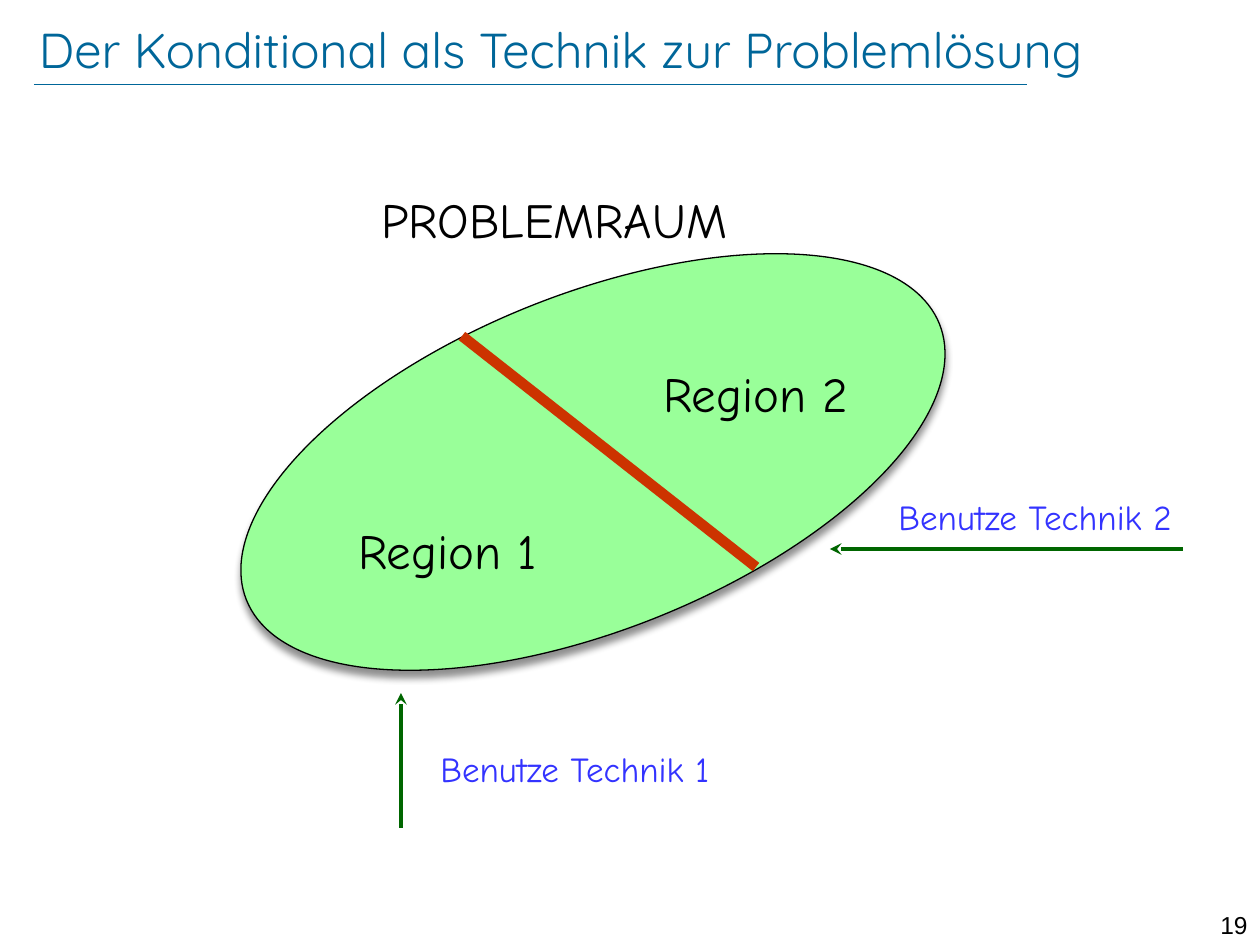
from lxml.etree import SubElement
from pptx import Presentation
from pptx.dml.color import RGBColor
from pptx.enum.shapes import MSO_CONNECTOR as Connector, MSO_SHAPE as Shape
from pptx.enum.text import MSO_ANCHOR as Anchor, PP_ALIGN as Align
from pptx.oxml.ns import qn
from pptx.util import Inches, Pt

PX = Inches(1) / 126
BLACK = RGBColor(0x00, 0x00, 0x00)
WHITE = RGBColor(0xFF, 0xFF, 0xFF)
TEAL = RGBColor(0x00, 0x66, 0x99)
GREEN = RGBColor(0x99, 0xFF, 0x99)
DARK_GREEN = RGBColor(0x00, 0x66, 0x00)
RED = RGBColor(0xCC, 0x33, 0x00)
BLUE = RGBColor(0x33, 0x33, 0xFF)

TITLE = ("Der Konditional als Technik zur Problemlösung", (39, 16, 1211, 66))
PAGE_NUMBER = ("19", (1191, 904, 69, 30))
PROBLEM_SPACE = (220, 294, 746, 336)
TILT = 338.3
SHADOW = {"blurRad": Pt(4), "dist": Pt(4), "dir": 90 * 60000, "rotWithShape": 0}
SHADOW_ALPHA = 43000

REGION_STYLE = {"name": "Comic Neue", "size": Pt(28)}
TECHNIQUE_STYLE = {"name": "Comic Neue", "size": Pt(20)}
LABELS = [
    ("Region 1", (346, 514, 237, 72), REGION_STYLE, BLACK),
    ("Region 2", (651, 357, 234, 72), REGION_STYLE, BLACK),
    ("PROBLEMRAUM", (369, 183, 428, 72), REGION_STYLE, BLACK),
    ("Benutze Technik 1", (428, 741, 368, 54), TECHNIQUE_STYLE, BLUE),
    ("Benutze Technik 2", (886, 489, 336, 55), TECHNIQUE_STYLE, BLUE),
]

TITLE_RULE = ((34, 84), (1027, 84), TEAL, 0.25)
DIVIDER = ((462, 336), (756, 567), RED, 6)
ARROWS = [
    ((401, 828), (401, 693), DARK_GREEN, 2.25),
    ((1183, 549), (830, 549), DARK_GREEN, 2.25),
]


def emu(lengths):
    return [round(length * PX) for length in lengths]


def add_text(slide, text, box, style, color, frame_format=None, align=Align.LEFT):
    frame = slide.shapes.add_textbox(*emu(box)).text_frame
    for key, value in {"word_wrap": True, **(frame_format or {})}.items():
        setattr(frame, key, value)
    paragraph = frame.paragraphs[0]
    paragraph.alignment = align
    run = paragraph.add_run()
    run.text = text
    for key, value in style.items():
        setattr(run.font, key, value)
    run.font.color.rgb = color


def add_line(slide, start, end, color, width, arrow=False):
    line = slide.shapes.add_connector(Connector.STRAIGHT, *emu(start + end))
    line.line.color.rgb = color
    line.line.width = Pt(width)
    if arrow:
        SubElement(line.line._get_or_add_ln(), qn("a:tailEnd"), type="stealth")
    SubElement(line._element.spPr, qn("a:effectLst"))


def add_problem_space(slide):
    ellipse = slide.shapes.add_shape(Shape.OVAL, *emu(PROBLEM_SPACE))
    ellipse.rotation = TILT
    ellipse.fill.solid()
    ellipse.fill.fore_color.rgb = GREEN
    ellipse.line.color.rgb = BLACK
    ellipse.line.width = Pt(0.75)
    ellipse.shadow.inherit = False
    effects = ellipse._element.spPr.find(qn("a:effectLst"))
    shadow = SubElement(effects, qn("a:outerShdw"))
    for key, value in SHADOW.items():
        shadow.set(key, str(value))
    tone = SubElement(shadow, qn("a:srgbClr"), val=str(BLACK))
    SubElement(tone, qn("a:alpha"), val=str(SHADOW_ALPHA))


def main():
    deck = Presentation()
    deck.slide_width, deck.slide_height = emu((1260, 945))
    slide = deck.slides.add_slide(deck.slide_layouts[6])
    slide.background.fill.solid()
    slide.background.fill.fore_color.rgb = WHITE

    add_line(slide, *TITLE_RULE)
    add_text(slide, *PAGE_NUMBER, {"name": "Arial", "size": Pt(14)}, BLACK, align=Align.RIGHT)
    sides = ("left", "top", "right", "bottom")
    title_frame = {f"margin_{side}": 0 for side in sides}
    title_frame["vertical_anchor"] = Anchor.MIDDLE
    add_text(slide, *TITLE, {"name": "Quicksand", "size": Pt(28)}, TEAL, title_frame)

    add_problem_space(slide)
    add_line(slide, *DIVIDER)
    for label in LABELS:
        add_text(slide, *label)
    for arrow in ARROWS:
        add_line(slide, *arrow, arrow=True)
    deck.save("out.pptx")


if __name__ == "__main__":
    main()
